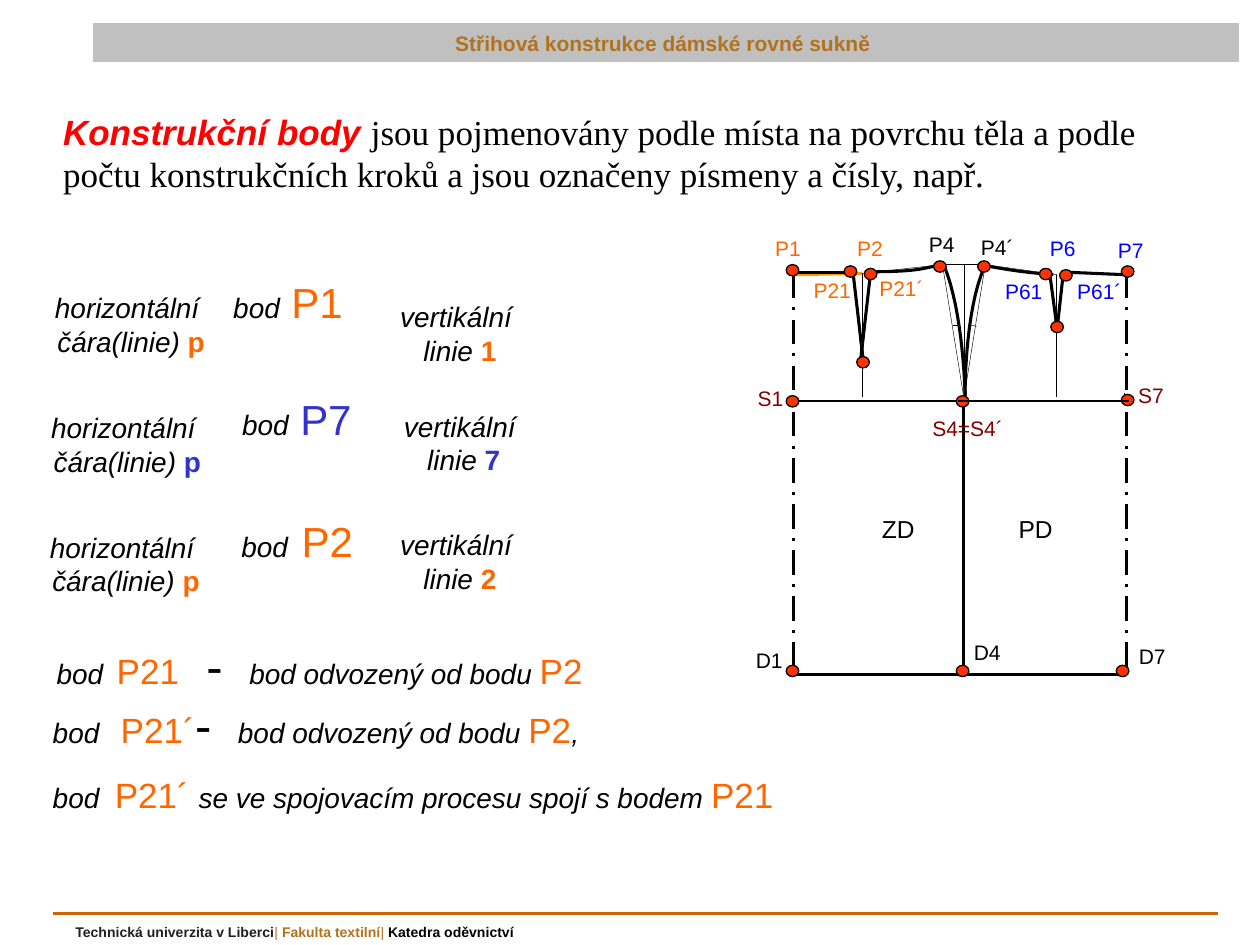
from dataclasses import dataclass

from lxml import etree
from pptx import Presentation
from pptx.dml.color import RGBColor
from pptx.enum.dml import MSO_LINE
from pptx.enum.shapes import MSO_CONNECTOR, MSO_SHAPE
from pptx.enum.text import MSO_ANCHOR, MSO_AUTO_SIZE, PP_ALIGN
from pptx.oxml.ns import qn
from pptx.util import Emu, Pt

EMU_PER_PX = 9144  # 100 px to the inch
CENTER, LEFT = PP_ALIGN.CENTER, PP_ALIGN.LEFT
TOP, MIDDLE = MSO_ANCHOR.TOP, MSO_ANCHOR.MIDDLE
FIXED_SIZE = MSO_AUTO_SIZE.NONE
STRAIGHT, OVAL = MSO_CONNECTOR.STRAIGHT, MSO_SHAPE.OVAL
DASH_DOT = MSO_LINE.LONG_DASH_DOT


@dataclass(frozen=True)
class Theme:
    sans: str = "Arial"
    serif: str = "Times New Roman"
    black: str = "000000"
    ink: str = "221E1F"
    red: str = "FF0000"
    orange: str = "FF6600"
    amber: str = "FF9900"
    violet: str = "3333CC"
    blue: str = "0000FF"
    maroon: str = "800000"
    brown: str = "B3721C"
    rule: str = "CC6600"
    bar: str = "C0C0C0"
    dot: str = "FF3300"
    footer: int = 8
    label: int = 12
    piece: int = 14
    word: int = 16
    point: int = 20
    big: int = 24
    dash: int = 28
    wide_gap: int = 32
    widest_gap: int = 44
    hair: float = 0.25
    tick: float = 0.5
    edge: float = 0.75
    thin: float = 1
    outline: float = 1.75
    footer_rule: float = 2.25


T = Theme()


def px(value):
    return Emu(round(value * EMU_PER_PX))


def run(text, size, color=T.black, name=T.sans, bold=False, italic=False):
    return text, color, dict(size=Pt(size), name=name, bold=bold, italic=italic)


def word(text):
    return run(text, T.word, italic=True)


def bezier(start, c1, c2, end, steps=16):
    for i in range(steps + 1):
        t = i / steps
        weights = (1 - t) ** 3, 3 * t * (1 - t) ** 2, 3 * t * t * (1 - t), t ** 3
        yield tuple(sum(w * p[axis] for w, p in zip(weights, (start, c1, c2, end)))
                    for axis in (0, 1))


class SlideBuilder:
    def __init__(self, theme, slide):
        self.theme, self.slide = theme, slide

    def fill_text(self, shape, paragraphs, align=LEFT, spacing=1.0, tabs=(), anchor=TOP):
        frame = shape.text_frame
        for key, value in dict(word_wrap=True, auto_size=FIXED_SIZE,
                               vertical_anchor=anchor).items():
            setattr(frame, key, value)
        for i, runs in enumerate(paragraphs):
            paragraph = frame.add_paragraph() if i else frame.paragraphs[0]
            properties = paragraph._p.get_or_add_pPr()
            if shape.is_placeholder:
                properties.set("marL", "0")
                properties.set("indent", "0")
                etree.SubElement(properties, qn("a:buNone"))
            if tabs and i == 0:
                stops = etree.SubElement(properties, qn("a:tabLst"))
                for stop in tabs:
                    etree.SubElement(stops, qn("a:tab"), pos=str(px(stop)), algn="l")
            for key, value in dict(alignment=align, line_spacing=spacing,
                                   space_before=Pt(0), space_after=Pt(0)).items():
                setattr(paragraph, key, value)
            for text, color, font in runs:
                piece = paragraph.add_run()
                piece.text = text
                for key, value in font.items():
                    setattr(piece.font, key, value)
                piece.font.color.rgb = RGBColor.from_string(color)

    def paint(self, shape, fill, line, width):
        shape.fill.solid()
        shape.fill.fore_color.rgb = RGBColor.from_string(fill)
        self.stroke(shape, line, width)

    def stroke(self, shape, color, width, dash=None):
        shape.line.color.rgb = RGBColor.from_string(color)
        shape.line.width = Pt(width)
        if dash:
            shape.line.dash_style = dash

    def placeholder(self, index, box, paragraphs, **style):
        shape = self.slide.placeholders[index]
        for key, value in zip(("left", "top", "width", "height"), box):
            setattr(shape, key, px(value))
        self.fill_text(shape, paragraphs, **style)
        return shape

    def text(self, box, paragraphs, **style):
        self.fill_text(self.slide.shapes.add_textbox(*map(px, box)), paragraphs, **style)

    def line(self, x1, y1, x2, y2, width, color=T.black, dash=None):
        line = self.slide.shapes.add_connector(STRAIGHT, *map(px, (x1, y1, x2, y2)))
        self.stroke(line, color, width, dash)
        etree.SubElement(line._element.spPr, qn("a:effectLst"))

    def curve(self, *controls):
        start, *rest = [tuple(map(px, p)) for p in bezier(*controls)]
        builder = self.slide.shapes.build_freeform(*start, scale=1.0)
        builder.add_line_segments(rest, close=False)
        shape = builder.convert_to_shape()
        shape.fill.background()
        shape.shadow.inherit = False
        self.stroke(shape, self.theme.black, self.theme.outline)

    def dot(self, x, y):
        dot = self.slide.shapes.add_shape(OVAL, *map(px, (x, y, 10, 9)))
        dot.shadow.inherit = False
        self.paint(dot, self.theme.dot, self.theme.black, self.theme.edge)


def main():
    deck = Presentation()
    deck.slide_width, deck.slide_height = px(1000), px(750)
    page = SlideBuilder(T, deck.slides.add_slide(deck.slide_layouts[1]))

    # Header bar, introduction and footer
    header = page.placeholder(
        0, (74, 19, 909, 30),
        [[run("Střihová konstrukce dámské rovné sukně ", T.label, T.brown, bold=True)]],
        align=CENTER, anchor=MIDDLE)
    page.paint(header, T.bar, T.bar, T.edge)
    page.placeholder(1, (40, 83, 939, 91), [[
        run("Konstrukční body ", T.point, T.red, bold=True, italic=True),
        run("jsou pojmenovány podle místa na povrchu těla a podle počtu "
            "konstrukčních kroků a jsou označeny písmeny a čísly, např.",
            T.point, name=T.serif)]])
    page.line(42, 725, 967, 725, T.footer_rule, T.rule)
    page.text((50, 728, 917, 23), [[
        run("Technická univerzita v Liberci", T.footer, T.ink, bold=True),
        run("| ", T.footer, T.brown),
        run("Fakulta textilní", T.footer, T.brown, bold=True),
        run("| ", T.footer, T.brown),
        run("Katedra oděvnictví", T.footer, bold=True)]], anchor=MIDDLE)

    # Points named by their horizontal and vertical lines
    for name, color, lead, align, bod, horizontal, vertical in (
            ("P1", T.orange, T.big, CENTER, (153, 219), (25, 226), (286, 233)),
            ("P7", T.violet, T.big, LEFT, (173, 312), (22, 321), (289, 320)),
            ("P2", T.orange, T.dash, LEFT, (171, 404), (21, 416), (286, 414))):
        page.text((*bod, 142, 50), [[run(" ", lead), word("bod"), run(" ", lead),
                                     run(name, T.big, color)]],
                  align=align, spacing=0.9)
        for place, first, second, mark in (
                (horizontal, "horizontální ", "čára(linie) ", "p"),
                (vertical, "vertikální ", "linie ", name[1])):
            page.text((*place, 158, 61),
                      [[word(first)],
                       [word(second), run(mark, T.word, color, bold=True)]],
                      align=CENTER)

    # Derived points
    derived = [run("\t-\t", T.dash), word("bod odvozený od bodu "),
               run("P2", T.point, T.orange)]
    page.text((35, 505, 572, 52),
              [[word("bod"), run(" ", T.dash), run("P21", T.point, T.orange), *derived]],
              spacing=0.9, tabs=(119, 153))
    page.text((32, 532, 665, 125), [
        [word("bod"), run(" ", T.widest_gap), run("P21´", T.point, T.orange),
         *derived, word(",")],
        [word("bod"), run(" ", T.wide_gap), run("P21´ ", T.point, T.orange),
         word("se ve spojovacím procesu spojí s bodem "),
         run("P21", T.point, T.orange)]], spacing=0.9, tabs=(113, 147))

    # Skirt pattern: construction lines
    page.line(631, 218, 684, 217, T.outline, T.amber)
    for ends in ((684, 217, 684, 315), (838, 218, 838, 315), (765, 535, 765, 210),
                 (748, 210, 782, 210), (748, 207, 748, 213), (782, 207, 782, 213),
                 (748, 210, 684, 217), (782, 210, 839, 218), (680, 286, 687, 286),
                 (835, 261, 842, 261), (677, 217, 684, 286), (684, 286, 691, 218),
                 (834, 218, 838, 261), (839, 261, 844, 218), (748, 210, 765, 316),
                 (782, 210, 765, 316), (770, 258, 775, 259), (756, 258, 760, 258),
                 (892, 312, 892, 319)):
        page.line(*ends, T.hair)
    for x in (677, 690, 834, 844):
        page.line(x, 217, x, 220, T.tick)

    # Skirt pattern: outline
    for ends in ((677, 216, 629, 216), (677, 216, 685, 285), (691, 216, 683, 286),
                 (833, 216, 839, 261), (839, 261, 844, 216), (765, 315, 765, 535),
                 (765, 535, 629, 535), (765, 535, 893, 535)):
        page.line(*ends, T.outline)
    for x in (630, 894):
        page.line(x, 217, x, 535, T.outline, dash=DASH_DOT)
    for controls in (((692, 216), (701, 215), (728, 217), (748, 209)),
                     ((749, 210), (765, 248), (766, 315), (766, 315)),
                     ((782, 210), (765, 247), (766, 315), (766, 315)),
                     ((836, 218), (806, 216), (783, 211), (783, 211)),
                     ((845, 216), (869, 217), (892, 218), (892, 218))):
        page.curve(*controls)
    page.line(630, 318, 766, 318, T.thin)

    # Labels
    for color, size, labels in (
            (T.orange, T.label, (("P1", 592, 182, 67), ("P2", 657, 182, 67),
                                 ("P21", 607, 215, 107), ("P21´", 662, 214, 107))),
            (T.blue, T.label, (("P6", 810, 182, 67), ("P7", 864, 184, 67),
                               ("P61", 770, 216, 85), ("P61´", 830, 216, 85))),
            (T.maroon, T.label, (("S1", 578, 301, 67), ("S7", 880, 299, 67),
                                 ("S4=S4´", 728, 325, 80))),
            (T.black, T.label, (("P4", 714, 179, 67), ("P4´", 758, 181, 67),
                                ("D1", 577, 509, 67), ("D4", 750, 503, 67),
                                ("D7", 881, 506, 67))),
            (T.black, T.piece, (("ZD", 673, 403, 80), ("PD", 772, 403, 100)))):
        for name, x, y, width in labels:
            page.text((x, y, width, 30), [[run(name, size, color)]], align=CENTER)

    # Construction points
    for x, y in ((624, 210), (670, 211), (686, 213), (741, 207), (759, 314),
                 (776, 207), (825, 213), (890, 211), (624, 314), (624, 528),
                 (759, 528), (886, 528), (890, 313), (841, 214), (834, 255),
                 (680, 283)):
        page.dot(x, y)
    page.line(760, 318, 896, 318, T.thin)

    deck.save("out.pptx")


if __name__ == "__main__":
    main()
